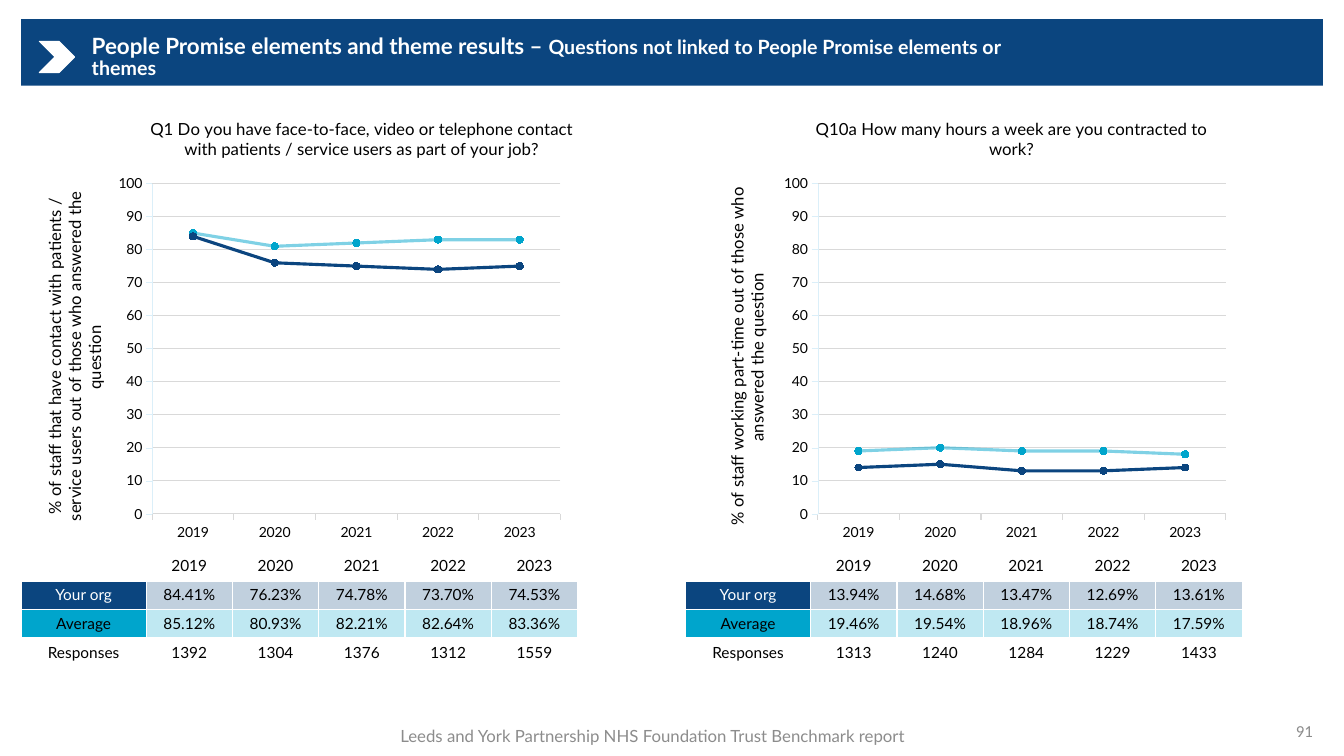
from lxml.etree import SubElement
from pptx import Presentation
from pptx.chart.data import CategoryChartData
from pptx.dml.color import RGBColor
from pptx.enum.chart import XL_CHART_TYPE, XL_MARKER_STYLE, XL_TICK_MARK
from pptx.enum.shapes import MSO_SHAPE
from pptx.enum.text import MSO_ANCHOR, MSO_AUTO_SIZE, PP_ALIGN
from pptx.oxml import parse_xml
from pptx.oxml.ns import nsdecls, qn
from pptx.util import Inches, Pt

NAVY, CYAN, WHITE, BLACK = "0B457F", "00A5CC", "FFFFFF", "000000"
GRID, AXIS, GREY = "D9D9D9", "DBEFF9", "8C8C8C"
YEARS = ["2019", "2020", "2021", "2022", "2023"]
CHART_WIDTH, CHART_HEIGHT = 5.52, 4.38
TABLE_WIDTH, LABEL_WIDTH = 5.52, 1.24

QUESTIONS = [
    {
        "left": 0.21,
        "chart_left": 0.38,
        "title": "Q1 Do you have face-to-face, video or telephone contact "
                 "with patients / service users as part of your job?",
        "axis_title": "% of staff that have contact with patients / service users "
                      "out of those who answered the question",
        "axis_title_at": (0.01, 0.93),
        "organisation": [84.41, 76.23, 74.78, 73.70, 74.53],
        "average": [85.12, 80.93, 82.21, 82.64, 83.36],
        "responses": [1392, 1304, 1376, 1312, 1559],
    },
    {
        "left": 6.8,
        "chart_left": 6.98,
        "title": "Q10a How many hours a week are you contracted to work?",
        "axis_title": "% of staff working part-time out of those who "
                      "answered the question",
        "axis_title_at": (0.18, 0.89),
        "organisation": [13.94, 14.68, 13.47, 12.69, 13.61],
        "average": [19.46, 19.54, 18.96, 18.74, 17.59],
        "responses": [1313, 1240, 1284, 1229, 1433],
    },
]


def paint(fill, color, alpha=None):
    """Fill with a hex colour, optionally with an opacity in percent."""
    fill.solid()
    fill.fore_color.rgb = RGBColor.from_string(color)
    if alpha is not None:
        node = fill._xPr.find(qn("a:solidFill")).find(qn("a:srgbClr"))
        SubElement(node, qn("a:alpha")).set("val", str(alpha * 1000))


def format_font(font, size, color=BLACK, bold=False, name="Lato"):
    font.size, font.bold, font.name = Pt(size), bold, name
    paint(font.fill, color)


def write(paragraph, text, align=PP_ALIGN.CENTER, **style):
    paragraph.alignment = align
    run = paragraph.add_run()
    run.text = text
    format_font(run.font, **style)


def place(element, index, **inches):
    """Give a chart part a fixed place, in inches within the chart."""
    for old in element.findall(qn("c:layout")):
        element.remove(old)
    layout = parse_xml(f'<c:layout {nsdecls("c")}><c:manualLayout/></c:layout>')
    manual = layout[0]
    if "w" in inches:
        SubElement(manual, qn("c:layoutTarget")).set("val", "inner")
    for key in ("x", "y"):
        SubElement(manual, qn(f"c:{key}Mode")).set("val", "edge")
    for key, value in inches.items():
        whole = CHART_WIDTH if key in "xw" else CHART_HEIGHT
        SubElement(manual, qn(f"c:{key}")).set("val", f"{value / whole:.4f}")
    element.insert(index, layout)


def add_borders(cell, bottom):
    properties = cell._tc.get_or_add_tcPr()
    for index, (side, width) in enumerate(zip("LRTB", (1, 1, 1, bottom))):
        properties.insert(index, parse_xml(
            f'<a:ln{side} {nsdecls("a")} w="{Pt(width)}"><a:solidFill>'
            f'<a:srgbClr val="{WHITE}"/></a:solidFill></a:ln{side}>'))


class ReportSlide:
    def __init__(self, presentation):
        self.slide = presentation.slides.add_slide(presentation.slide_layouts[5])
        self.shapes = self.slide.shapes

    def add_block(self, kind, left, top, width, height, color, outlined=False):
        shape = self.shapes.add_shape(
            kind, Inches(left), Inches(top), Inches(width), Inches(height))
        shape.shadow.inherit = False
        paint(shape.fill, color)
        if outlined:
            paint(shape.line.fill, color)
            shape.line.width = Pt(0.75)
        else:
            shape.line.fill.background()

    def set_title(self, parts):
        title = self.shapes.title
        title.left, title.top = Inches(0.81), Inches(0.35)
        title.width, title.height = Inches(9.61), Inches(0.44)
        frame = title.text_frame
        frame.auto_size, frame.word_wrap = MSO_AUTO_SIZE.NONE, True
        frame.vertical_anchor = MSO_ANCHOR.MIDDLE
        paragraph = frame.paragraphs[0]
        paragraph.line_spacing = 0.9
        for text, size in parts:
            write(paragraph, text, PP_ALIGN.LEFT, size=size, color=WHITE, bold=True)
        self.shapes._spTree.append(title._element)  # in front of the band

    def add_text(self, text, left, top, width, height, align, **style):
        box = self.shapes.add_textbox(
            Inches(left), Inches(top), Inches(width), Inches(height))
        frame = box.text_frame
        frame.word_wrap = True
        frame.vertical_anchor = MSO_ANCHOR.MIDDLE
        write(frame.paragraphs[0], text, align, **style)

    def add_line_chart(self, question):
        data = CategoryChartData()
        data.categories = YEARS
        for name, key in (("Average", "average"), ("Your org", "organisation")):
            data.add_series(name, [round(value) for value in question[key]])
        chart = self.shapes.add_chart(
            XL_CHART_TYPE.LINE_MARKERS, Inches(question["chart_left"]), Inches(0.98),
            Inches(CHART_WIDTH), Inches(CHART_HEIGHT), data).chart
        format_font(chart.font, 10)
        chart.has_legend = False

        # Axes and grid
        value_axis = chart.value_axis
        value_axis.minimum_scale, value_axis.maximum_scale = 0, 100
        value_axis.major_unit = 10
        for line, color, width in (
                (value_axis.format.line, AXIS, 0.25),
                (value_axis.major_gridlines.format.line, GRID, 0.75),
                (chart.category_axis.format.line, GRID, 0.75)):
            paint(line.fill, color)
            line.width = Pt(width)
        for axis in (value_axis, chart.category_axis):
            axis.major_tick_mark = XL_TICK_MARK.OUTSIDE
            format_font(axis.tick_labels.font, 10)

        # Titles and plot area
        chart.has_title = value_axis.has_title = True
        for title, key, (x, y) in (
                (chart.chart_title, "title", (1.08, 0.15)),
                (value_axis.axis_title, "axis_title", question["axis_title_at"])):
            write(title.text_frame.paragraphs[0], question[key], size=12)
            place(title._element, 1, x=x, y=y)
        body = value_axis.axis_title.text_frame._txBody.find(qn("a:bodyPr"))
        body.set("rot", "-5400000")
        body.set("vert", "horz")
        place(chart._chartSpace.chart.plotArea, 0, x=1.13, y=0.85, w=4.05, h=3.31)

        # Series
        plot = chart.plots[0]
        plot.vary_by_categories = False
        for series, color, alpha in zip(plot.series, (CYAN, NAVY), (50, None)):
            series.smooth = False
            paint(series.format.line.fill, color, alpha)
            series.format.line.width = Pt(2.25)
            series.marker.style, series.marker.size = XL_MARKER_STYLE.CIRCLE, 5
            paint(series.marker.format.fill, color)
            paint(series.marker.format.line.fill, color)

    def add_results_table(self, question):
        rows = [
            ("", YEARS, None, BLACK),
            ("Your org", [f"{v:.2f}%" for v in question["organisation"]], NAVY, WHITE),
            ("Average", [f"{v:.2f}%" for v in question["average"]], CYAN, BLACK),
            ("Responses", [str(v) for v in question["responses"]], None, BLACK),
        ]
        table = self.shapes.add_table(
            len(rows), len(YEARS) + 1, Inches(question["left"]), Inches(5.47),
            Inches(TABLE_WIDTH), Inches(1.12)).table
        table.first_row = table.horz_banding = False
        year_width = (TABLE_WIDTH - LABEL_WIDTH) / len(YEARS)
        for index, column in enumerate(table.columns):
            column.width = Inches(year_width if index else LABEL_WIDTH)
        for row_index, (label, values, color, label_color) in enumerate(rows):
            for column_index, text in enumerate([label, *values]):
                cell = table.cell(row_index, column_index)
                paragraph = cell.text_frame.paragraphs[0]
                if text:
                    write(paragraph, text, size=11,
                          color=BLACK if column_index else label_color)
                else:
                    SubElement(paragraph._p, qn("a:endParaRPr")).set("sz", "1100")
                if color:
                    paint(cell.fill, color, 25 if column_index else None)
                else:
                    cell.fill.background()
                add_borders(cell, bottom=1 if row_index else 3)


def main():
    presentation = Presentation()
    presentation.slide_width, presentation.slide_height = Inches(13.33), Inches(7.5)
    report = ReportSlide(presentation)
    # Heading band
    report.add_block(MSO_SHAPE.RECTANGLE, 0.21, 0.19, 12.91, 0.66, NAVY)
    report.add_block(MSO_SHAPE.CHEVRON, 0.39, 0.41, 0.35, 0.31, WHITE, outlined=True)
    report.set_title([
        ("People Promise elements and theme results – ", 16),
        ("Questions not linked to People Promise elements or themes", 14)])
    # Results for each question
    for question in QUESTIONS:
        report.add_line_chart(question)
        report.add_results_table(question)
    # Footer
    report.add_text("91", 10.12, 7.05, 3, 0.4, PP_ALIGN.RIGHT,
                    size=12, color=GREY, name="Calibri")
    report.add_text("Leeds and York Partnership NHS Foundation Trust Benchmark report",
                    2.95, 7.1, 7.05, 0.39, PP_ALIGN.CENTER, size=12, color=GREY)
    presentation.save("out.pptx")


if __name__ == "__main__":
    main()
